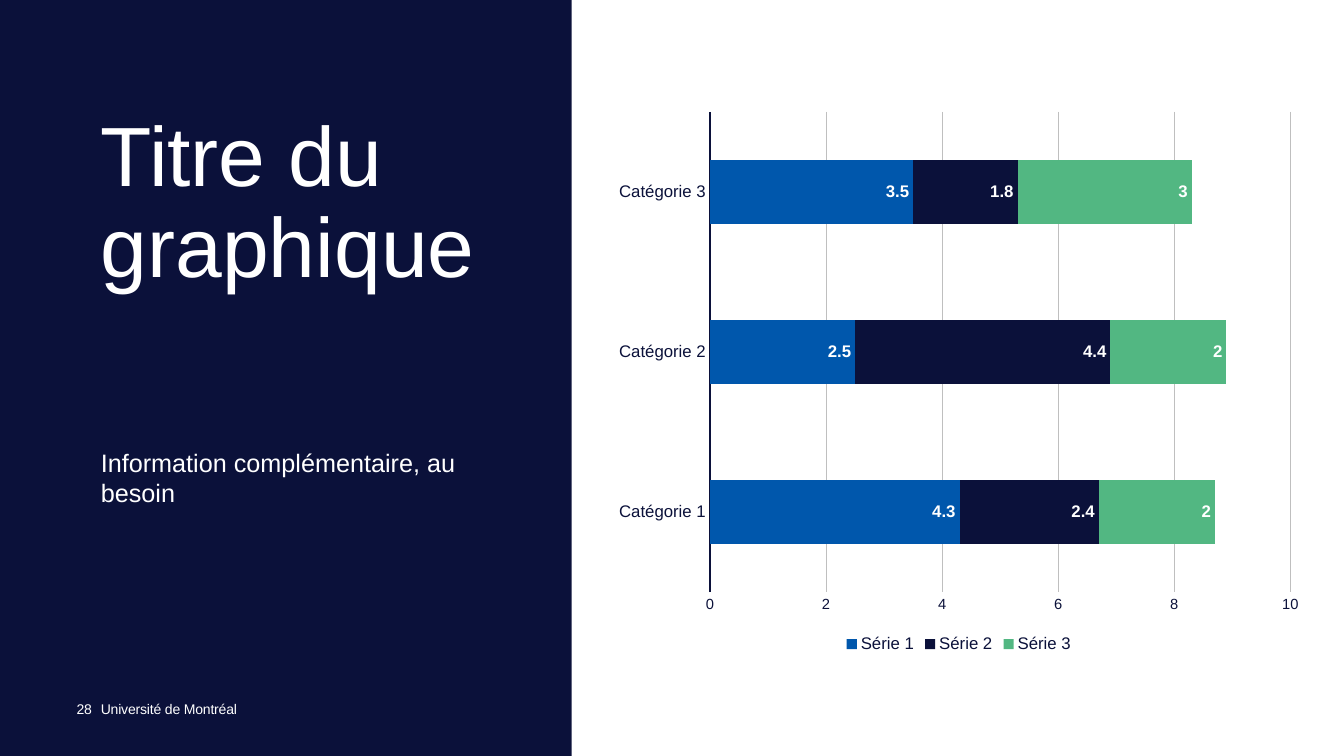
from pptx import Presentation
from pptx.chart.data import CategoryChartData
from pptx.dml.color import RGBColor
from pptx.enum.chart import XL_CHART_TYPE, XL_LABEL_POSITION, XL_LEGEND_POSITION, XL_TICK_MARK
from pptx.enum.shapes import MSO_SHAPE
from pptx.enum.text import MSO_ANCHOR, MSO_AUTO_SIZE, PP_ALIGN
from pptx.util import Inches, Pt

NAVY = RGBColor(0x0B, 0x11, 0x3A)
BLUE = RGBColor(0x00, 0x57, 0xAC)
GREEN = RGBColor(0x52, 0xB7, 0x82)
GREY = RGBColor(0xBF, 0xBF, 0xBF)
WHITE = RGBColor(0xFF, 0xFF, 0xFF)

CATEGORIES = ["Catégorie 1", "Catégorie 2", "Catégorie 3"]
SERIES = [
    ("Série 1", (4.3, 2.5, 3.5), BLUE),
    ("Série 2", (2.4, 4.4, 1.8), NAVY),
    ("Série 3", (2, 2, 3), GREEN),
]


def set_format(target, values):
    for name, value in values.items():
        setattr(target, name, value)


class ChartSlide:
    font_name = "Arial"

    def __init__(self, deck, background):
        self.page = deck.slides.add_slide(deck.slide_layouts[0])
        fill = self.page.background.fill
        fill.solid()
        fill.fore_color.rgb = background

    def style_font(self, font, size, color, bold=False):
        set_format(font, {"name": self.font_name, "size": Pt(size), "bold": bold})
        font.color.rgb = color

    def place(self, box, left, top, width, height):
        set_format(box, {"left": Inches(left), "top": Inches(top),
                         "width": Inches(width), "height": Inches(height)})

    def panel(self, left, top, width, height, color):
        box = self.page.shapes.add_shape(
            MSO_SHAPE.RECTANGLE, Inches(left), Inches(top), Inches(width), Inches(height))
        box.shadow.inherit = False
        box.fill.solid()
        box.fill.fore_color.rgb = color
        box.line.fill.background()

    def fill_text(self, box, text, size, inset_left=0, inset_top=0, **para_format):
        frame = box.text_frame
        set_format(frame, {
            "word_wrap": True, "auto_size": MSO_AUTO_SIZE.NONE,
            "vertical_anchor": MSO_ANCHOR.TOP,
            "margin_left": Inches(inset_left), "margin_top": Inches(inset_top),
            "margin_right": 0, "margin_bottom": 0})
        para = frame.paragraphs[0]
        set_format(para, {"alignment": PP_ALIGN.LEFT, "space_before": Pt(0), **para_format})
        span = para.add_run()
        span.text = text
        self.style_font(span.font, size, WHITE)
        return span

    def placeholder(self, index, position, text, size, **text_format):
        box = self.page.placeholders[index]
        self.place(box, *position)
        self.fill_text(box, text, size, **text_format)

    def footer(self, position, text, **text_format):
        box = self.page.shapes.add_textbox(*(Inches(length) for length in position))
        span = self.fill_text(box, text, 10, **text_format)
        span._r.get_or_add_rPr().set("spc", "-10")

    def stacked_bars(self, left, top, width, height):
        data = CategoryChartData()
        data.categories = CATEGORIES
        for name, values, _ in SERIES:
            data.add_series(name, values)
        chart = self.page.shapes.add_chart(
            XL_CHART_TYPE.BAR_STACKED, Inches(left), Inches(top),
            Inches(width), Inches(height), data).chart
        self.style_font(chart.font, 10, WHITE)
        set_format(chart, {"has_title": False, "has_legend": True})
        set_format(chart.legend, {"position": XL_LEGEND_POSITION.BOTTOM,
                                  "include_in_layout": False})
        self.style_font(chart.legend.font, 12, NAVY)

        for axis, size in ((chart.category_axis, 12), (chart.value_axis, 10.5)):
            set_format(axis, {"major_tick_mark": XL_TICK_MARK.NONE,
                              "minor_tick_mark": XL_TICK_MARK.NONE})
            self.style_font(axis.tick_labels.font, size, NAVY)
        set_format(chart.value_axis, {"major_unit": 2, "has_major_gridlines": True})
        chart.value_axis.format.line.fill.background()
        for line, color in ((chart.category_axis.format.line, NAVY),
                            (chart.value_axis.major_gridlines.format.line, GREY)):
            line.color.rgb = color
            line.width = Pt(0.75)

        plot = chart.plots[0]
        set_format(plot, {"gap_width": 150, "overlap": 100, "vary_by_categories": False})
        for series, (_, _, color) in zip(plot.series, SERIES):
            series.format.fill.solid()
            series.format.fill.fore_color.rgb = color
            labels = series.data_labels
            set_format(labels, {"show_value": True, "position": XL_LABEL_POSITION.INSIDE_END})
            self.style_font(labels.font, 12, WHITE, bold=True)


def main():
    deck = Presentation()
    set_format(deck, {"slide_width": Inches(13.33), "slide_height": Inches(7.5)})
    slide = ChartSlide(deck, NAVY)
    slide.panel(5.67, 0, 7.66, 7.5, WHITE)
    slide.footer((1, 6.95, 4.14, 0.4), "Université de Montréal")
    slide.stacked_bars(6, 1, 7.02, 5.52)
    slide.placeholder(1, (1, 4.31, 4.14, 1.5), "Information complémentaire, au besoin", 18,
                      inset_top=0.13, space_after=Pt(6))
    slide.placeholder(0, (1, 1.13, 4.14, 3.1), "Titre du graphique", 60, line_spacing=0.9)
    slide.footer((0.5, 6.95, 0.45, 0.4), "28", inset_left=0.22, alignment=PP_ALIGN.CENTER)
    deck.save("out.pptx")


if __name__ == "__main__":
    main()
